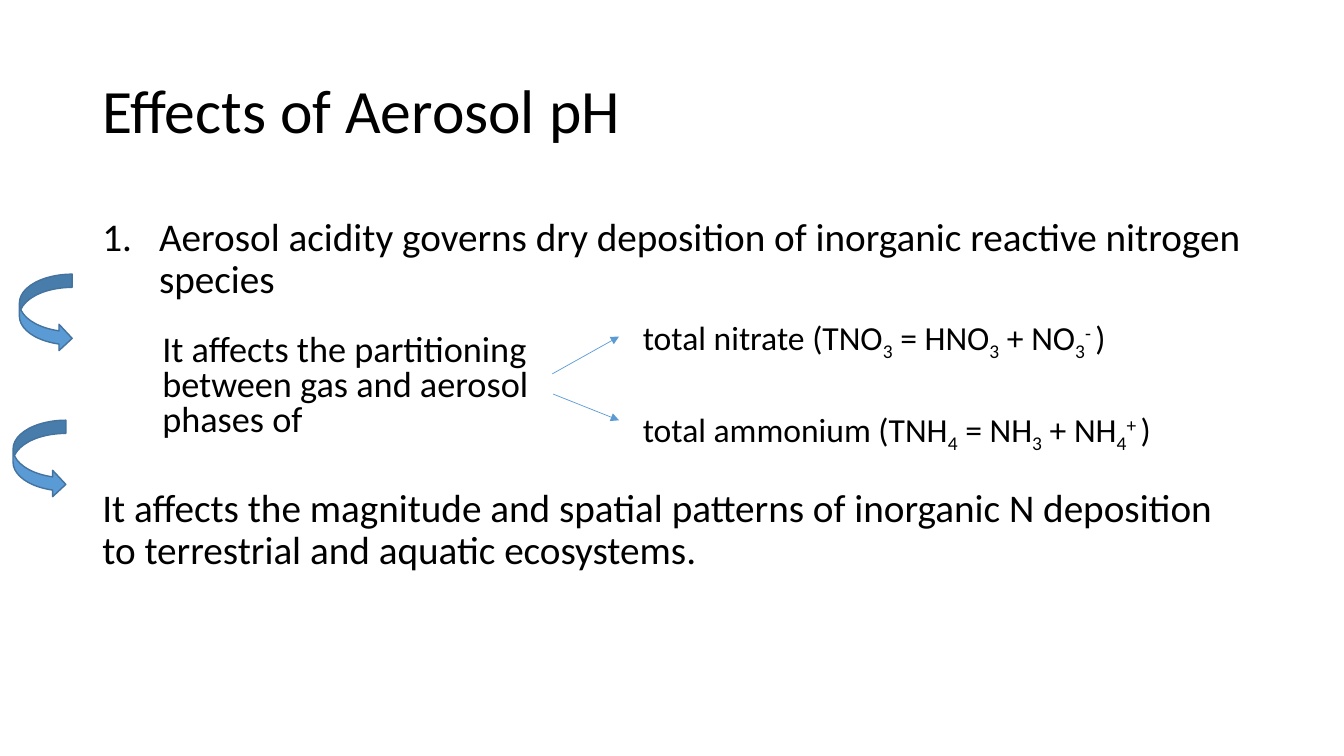
from dataclasses import dataclass

import pptx
import pptx.dml.color
import pptx.enum.shapes
import pptx.enum.text
import pptx.oxml.ns
import pptx.slide
import pptx.util
from lxml import etree
from pptx.util import Cm

BLACK = pptx.dml.color.RGBColor(0x00, 0x00, 0x00)
BLUE = pptx.dml.color.RGBColor(0x5B, 0x9B, 0xD5)
DARK_BLUE = pptx.dml.color.RGBColor(0x43, 0x73, 0x9E)

ANCHOR = pptx.enum.text.MSO_ANCHOR
SUBSCRIPT = -25000
SUPERSCRIPT = 30000
NUMBER_INDENT = Cm(1.43)


@dataclass(frozen=True)
class Fragment:
    text: str
    baseline: int = 0


@dataclass(frozen=True)
class TextBlock:
    left: float
    top: float
    width: float
    height: float
    size: float
    fragments: tuple[Fragment, ...]
    line_spacing: float = 0.9
    anchor: ANCHOR = ANCHOR.TOP
    numbered: bool = False


@dataclass(frozen=True)
class CurvedArrow:
    left: float
    top: float
    width: float = 1.33
    height: float = 1.95


@dataclass(frozen=True)
class Branch:
    start_x: float
    start_y: float
    end_x: float
    end_y: float


def formula(opening: str, total: str, gas: str, ion: str, digits: str, charge: str) -> tuple[Fragment, ...]:
    total_digit, gas_digit, ion_digit = digits
    return (
        Fragment(f"{opening} ({total}"), Fragment(total_digit, SUBSCRIPT),
        Fragment(f" = {gas}"), Fragment(gas_digit, SUBSCRIPT),
        Fragment(f" + {ion}"), Fragment(ion_digit, SUBSCRIPT),
        Fragment(f"{charge} ", SUPERSCRIPT), Fragment(")"),
    )


TEXT_BLOCKS = (
    TextBlock(2.33, 1.01, 29.21, 3.68, 44, (Fragment("Effects of Aerosol pH"),), anchor=ANCHOR.MIDDLE),
    TextBlock(2.33, 5.36, 29.21, 2.43, 28, (Fragment(
        "Aerosol acidity governs dry deposition of inorganic reactive nitrogen species"),), numbered=True),
    TextBlock(2.33, 12.19, 29.21, 2.43, 28, (Fragment(
        "It affects the magnitude and spatial patterns of inorganic N deposition "
        "to terrestrial and aquatic ecosystems."),)),
    TextBlock(15.95, 7.87, 15.21, 1.5, 24, formula("total nitrate", "TNO", "HNO", "NO", "333", "-")),
    TextBlock(15.95, 10.19, 14.86, 1.5, 24, formula("total ammonium", "TNH", "NH", "NH", "434", "+")),
    TextBlock(3.84, 8.31, 12.14, 2.95, 25.9, (Fragment(
        "It affects the partitioning between gas and aerosol phases of"),), line_spacing=0.8),
)
CURVED_ARROWS = (CurvedArrow(0.49, 6.91), CurvedArrow(0.33, 10.59))
BRANCHES = (Branch(13.92, 9.42, 15.6, 8.48), Branch(13.94, 9.93, 15.6, 10.59))


def apply_format(target: object, values: dict[str, object]) -> None:
    for name, value in values.items():
        setattr(target, name, value)


def add_child(parent: etree._Element, tag: str, **attributes: str) -> None:
    etree.SubElement(parent, pptx.oxml.ns.qn(tag), attributes)


def add_text(slide: pptx.slide.Slide, block: TextBlock) -> None:
    shape = slide.shapes.add_textbox(Cm(block.left), Cm(block.top), Cm(block.width), Cm(block.height))
    apply_format(shape.text_frame, {"word_wrap": True, "vertical_anchor": block.anchor})
    paragraph = shape.text_frame.paragraphs[0]
    paragraph.line_spacing = block.line_spacing
    if block.numbered:
        properties = paragraph._p.get_or_add_pPr()
        properties.set("marL", str(int(NUMBER_INDENT)))
        properties.set("indent", str(-int(NUMBER_INDENT)))
        add_child(properties, "a:buFont", typeface="+mj-lt")
        add_child(properties, "a:buAutoNum", type="arabicPeriod")
    for fragment in block.fragments:
        run = paragraph.add_run()
        run.text = fragment.text
        apply_format(run.font, {"name": "Calibri", "size": pptx.util.Pt(block.size)})
        run.font.color.rgb = BLACK
        if fragment.baseline:
            run._r.get_or_add_rPr().set("baseline", str(fragment.baseline))


def add_curved_arrow(slide: pptx.slide.Slide, arrow: CurvedArrow) -> None:
    shape = slide.shapes.add_shape(
        pptx.enum.shapes.MSO_SHAPE.CURVED_RIGHT_ARROW,
        Cm(arrow.left), Cm(arrow.top), Cm(arrow.width), Cm(arrow.height),
    )
    shape.shadow.inherit = False
    shape.fill.solid()
    shape.fill.fore_color.rgb = BLUE
    shape.line.color.rgb = DARK_BLUE
    shape.line.width = pptx.util.Pt(1)


def add_branch(slide: pptx.slide.Slide, branch: Branch) -> None:
    connector = slide.shapes.add_connector(
        pptx.enum.shapes.MSO_CONNECTOR.STRAIGHT,
        Cm(branch.start_x), Cm(branch.start_y), Cm(branch.end_x), Cm(branch.end_y),
    )
    connector.line.color.rgb = BLUE
    connector.line.width = pptx.util.Pt(0.5)
    add_child(connector.line._get_or_add_ln(), "a:tailEnd", type="triangle")
    add_child(connector._element.spPr, "a:effectLst")


def main() -> None:
    presentation = pptx.Presentation()
    apply_format(presentation, {"slide_width": Cm(33.87), "slide_height": Cm(19.05)})
    slide = presentation.slides.add_slide(presentation.slide_layouts[6])
    for block in TEXT_BLOCKS:
        add_text(slide, block)
    for arrow in CURVED_ARROWS:
        add_curved_arrow(slide, arrow)
    for branch in BRANCHES:
        add_branch(slide, branch)
    presentation.save("out.pptx")


if __name__ == "__main__":
    main()
